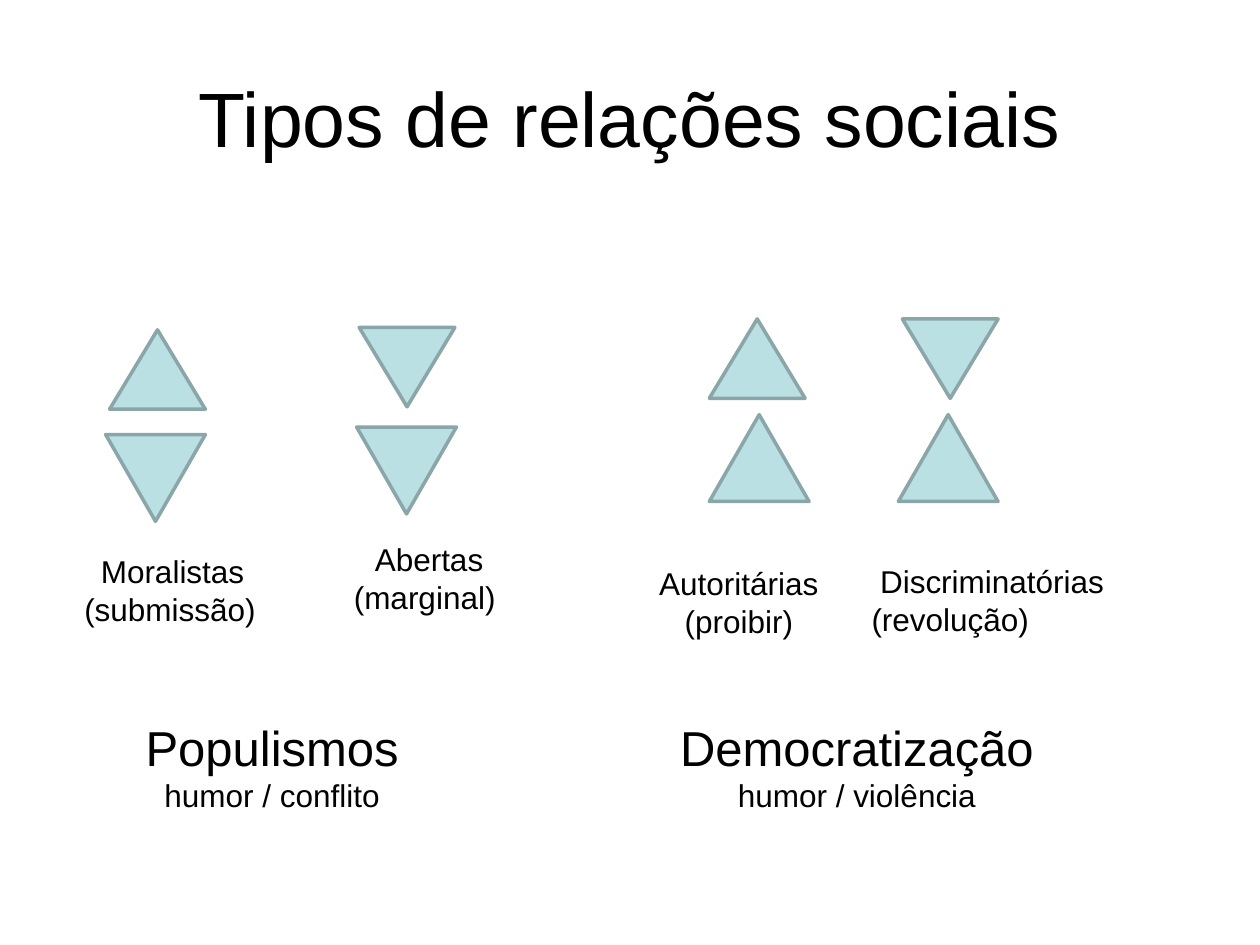
from dataclasses import dataclass

from pptx import Presentation
from pptx.dml.color import RGBColor as Rgb
from pptx.enum.shapes import MSO_SHAPE as Kind
from pptx.enum.text import MSO_ANCHOR as Anchor, MSO_AUTO_SIZE as Fit, PP_ALIGN as Align
from pptx.util import Cm, Pt

FONT = "Arial"
BLACK, AQUA, TEAL = "000000", "BBE0E3", "8AA6A8"
SMALL, LARGE = (1.93, 1.6), (2.01, 1.75)
MID, LEFT = Align.CENTER, Align.LEFT


@dataclass
class Mark:
    left: float
    top: float
    size: tuple[float, float]
    down: bool = False


@dataclass
class Line:
    text: str
    align: Align = MID
    size: int = 18


@dataclass
class Label:
    left: float
    top: float
    width: float
    height: float
    lines: list[Line]
    wrap: bool = True


MARKS = [
    Mark(2.21, 6.65, SMALL),
    Mark(2.13, 8.76, LARGE, True),
    Mark(7.24, 6.6, SMALL, True),
    Mark(7.19, 8.61, LARGE, True),
    Mark(14.3, 6.43, SMALL),
    Mark(14.3, 8.36, LARGE),
    Mark(18.19, 6.43, SMALL, True),
    Mark(18.11, 8.36, LARGE),
]

LABELS = [
    Label(1.45, 11, 4.06, 1.8, [Line("Moralistas"), Line("(submissão)", LEFT)]),
    Label(6.81, 10.77, 3.68, 1.8, [Line("Abertas (marginal) ")]),
    Label(12.9, 11.25, 3.99, 1.8, [Line("Autoritárias"), Line("(proibir)")]),
    Label(17.32, 11.2, 5.36, 1.8, [Line("Discriminatórias"), Line("(revolução)", LEFT)]),
    Label(2.64, 14.33, 5.69, 2.24,
          [Line("Populismos", size=28), Line("humor / conflito")], False),
    Label(13.46, 14.33, 7.75, 2.24,
          [Line("Democratização", LEFT, 28), Line("humor / violência")], False),
]


def paint(code: str) -> Rgb:
    return Rgb.from_string(code)


def style(para, line: Line) -> None:
    para.text = line.text
    para.alignment = line.align
    para.font.name = FONT
    para.font.size = Pt(line.size)
    para.font.color.rgb = paint(BLACK)


def draw_mark(slide, mark: Mark) -> None:
    width, height = mark.size
    shape = slide.shapes.add_shape(
        Kind.ISOSCELES_TRIANGLE, Cm(mark.left), Cm(mark.top), Cm(width), Cm(height))
    shape.rotation = 180 if mark.down else 0
    shape.shadow.inherit = False
    shape.fill.solid()
    shape.fill.fore_color.rgb = paint(AQUA)
    shape.line.color.rgb = paint(TEAL)
    shape.line.width = Pt(2)


def draw_label(slide, label: Label) -> None:
    box = slide.shapes.add_textbox(
        Cm(label.left), Cm(label.top), Cm(label.width), Cm(label.height))
    frame = box.text_frame
    frame.word_wrap = label.wrap
    frame.auto_size = Fit.SHAPE_TO_FIT_TEXT
    for index, line in enumerate(label.lines):
        para = frame.add_paragraph() if index else frame.paragraphs[0]
        style(para, line)


def draw_title(slide, text: str) -> None:
    title = slide.shapes.title
    title.left, title.top = Cm(1.27), Cm(0.76)
    title.width, title.height = Cm(22.86), Cm(3.18)
    title.text_frame.vertical_anchor = Anchor.MIDDLE
    style(title.text_frame.paragraphs[0], Line(text, size=44))


def main() -> None:
    deck = Presentation()
    deck.slide_width, deck.slide_height = Cm(25.4), Cm(19.05)
    slide = deck.slides.add_slide(deck.slide_layouts[5])
    draw_title(slide, "Tipos de relações sociais")
    for mark in MARKS:
        draw_mark(slide, mark)
    for label in LABELS:
        draw_label(slide, label)
    deck.save("out.pptx")


if __name__ == "__main__":
    main()
